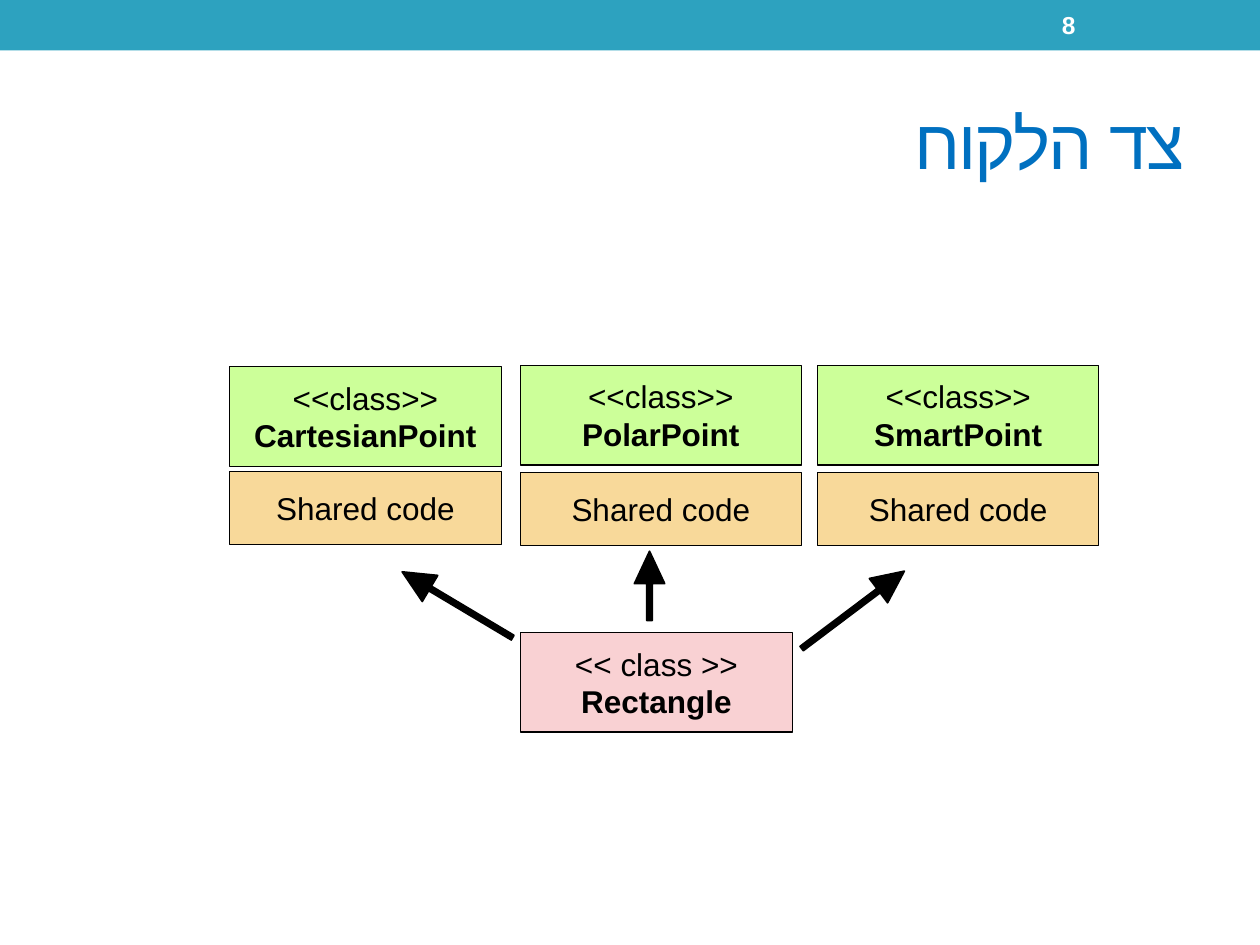
from lxml import etree
from pptx import Presentation
from pptx import util as u
from pptx.dml.color import RGBColor
from pptx.enum import shapes, text
from pptx.oxml.ns import qn

TEAL = RGBColor(0x2D, 0xA2, 0xBF)
BLUE = RGBColor(0x00, 0x70, 0xC0)
WHITE = RGBColor(0xFF, 0xFF, 0xFF)
BLACK = RGBColor(0x00, 0x00, 0x00)
GREEN = RGBColor(0xCC, 0xFF, 0x99)
ORANGE = RGBColor(0xF8, 0xD9, 0x9A)
PINK = RGBColor(0xF9, 0xD1, 0xD3)
RECT = shapes.MSO_SHAPE.RECTANGLE
PROCESS = shapes.MSO_SHAPE.FLOWCHART_PROCESS
ARROW = shapes.MSO_SHAPE.LEFT_ARROW

prs = Presentation()
prs.slide_width, prs.slide_height = u.Inches(10), u.Inches(7.5)
slide = prs.slides.add_slide(prs.slide_layouts[5])


def add_block(kind, box, fill, line_width=0.75):
    block = slide.shapes.add_shape(kind, *[u.Inches(length) for length in box])
    block.shadow.inherit = False
    block.fill.solid()
    block.fill.fore_color.rgb = fill
    if line_width:
        block.line.color.rgb = BLACK
        block.line.width = u.Pt(line_width)
    else:
        block.line.fill.background()
    return block


def write_lines(frame, lines, align, size, color, wrap=False):
    """Fill the frame with right-to-left paragraphs given as (words, bold)."""
    frame.word_wrap = wrap
    frame.vertical_anchor = text.MSO_ANCHOR.MIDDLE
    for number, (words, bold) in enumerate(lines):
        paragraph = frame.add_paragraph() if number else frame.paragraphs[0]
        paragraph.alignment = align
        paragraph._p.get_or_add_pPr().set("rtl", "1")
        run = paragraph.add_run()
        run.text = words
        run.font.name = "Arial"
        run.font.size = u.Pt(size)
        run.font.bold = bold
        run.font.color.rgb = color
        etree.SubElement(run.font._element, qn("a:cs"), typeface="Arial")


# Header band, title and page number
add_block(RECT, (0, 0, 10, 0.4), TEAL, line_width=0)

title = slide.shapes.title
title.left, title.top = u.Inches(0.5), u.Inches(0.58)
title.width, title.height = u.Inches(9), u.Inches(1.08)
write_lines(title.text_frame, [("צד הלקוח", False)],
            text.PP_ALIGN.RIGHT, 40, BLUE, wrap=True)
title.text_frame.paragraphs[0].runs[0].font._element.set("spc", "-100")

page_number = slide.shapes.add_textbox(
    u.Inches(8.33), u.Inches(0.02), u.Inches(1.17), u.Inches(0.36))
write_lines(page_number.text_frame, [("8", True)],
            text.PP_ALIGN.LEFT, 14, WHITE, wrap=True)

# Supplier classes over their shared code, and the client below
CLASS_HEIGHT, SHARED_HEIGHT = 0.79, 0.58
suppliers = [
    ("CartesianPoint", 1.82, 2.16, 2.91, 3.74),
    ("PolarPoint", 4.13, 2.23, 2.9, 3.75),
    ("SmartPoint", 6.49, 2.23, 2.9, 3.75),
]
boxes = []
for name, left, width, class_top, shared_top in suppliers:
    boxes += [
        (RECT, (left, shared_top, width, SHARED_HEIGHT), ORANGE,
         [("Shared code", False)]),
        (PROCESS, (left, class_top, width, CLASS_HEIGHT), GREEN,
         [("<<class>>", False), (name, True)]),
    ]
boxes.append((PROCESS, (4.13, 5.02, 2.16, CLASS_HEIGHT), PINK,
              [("<< class >>", False), ("Rectangle", True)]))
for kind, box, fill, lines in boxes:
    block = add_block(kind, box, fill)
    write_lines(block.text_frame, lines, text.PP_ALIGN.CENTER, 18, BLACK)

# Arrows from the client to each supplier
for left, top, length, angle in [(3.12, 4.68, 1.02, 30.8),
                                 (6.26, 4.72, 1.02, 143),
                                 (4.88, 4.53, 0.55, 90)]:
    arrow = add_block(ARROW, (left, top, length, 0.24), BLACK, line_width=1)
    arrow.adjustments[0], arrow.adjustments[1] = 0.18, 1.07
    arrow.rotation = angle

prs.save("out.pptx")
